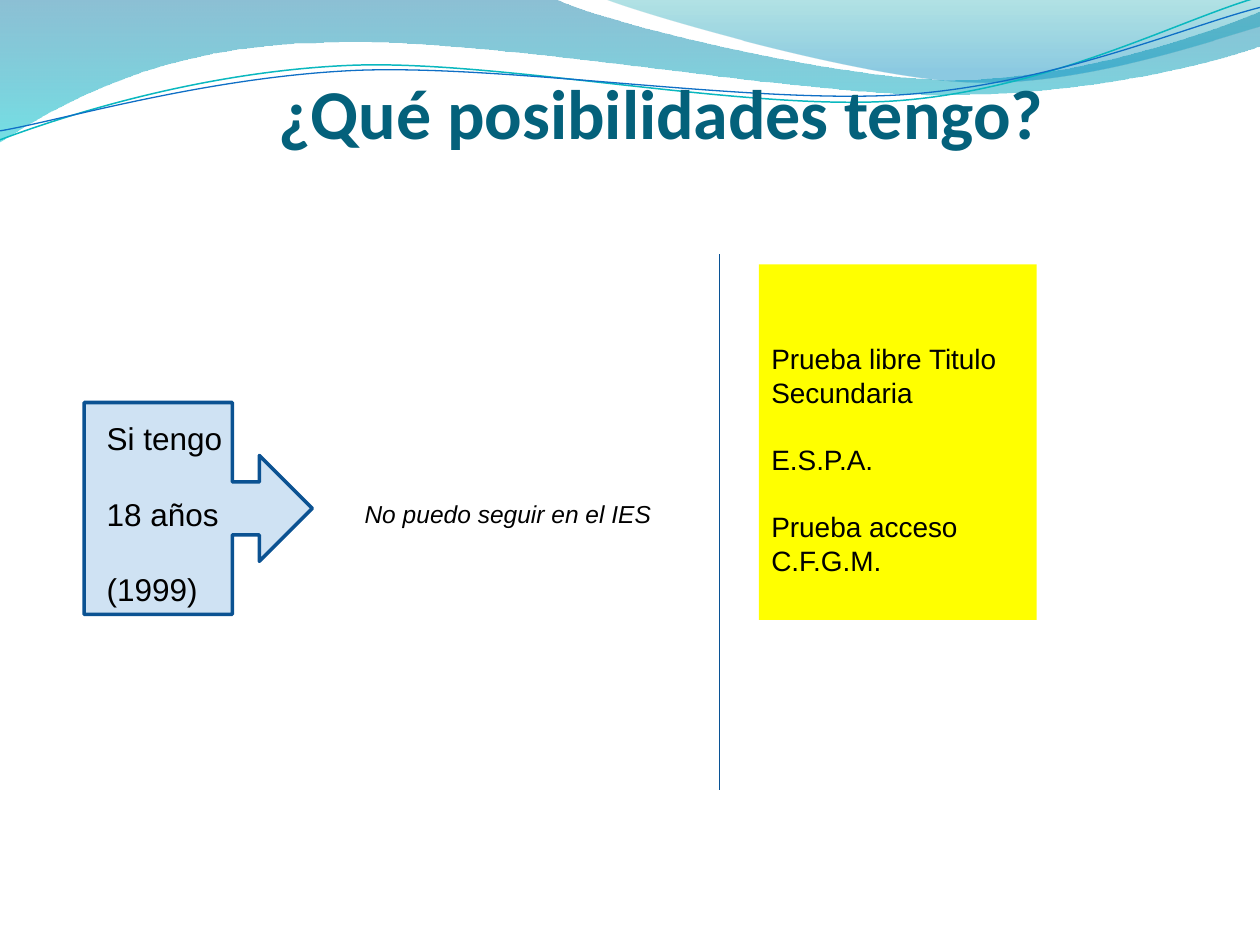
from dataclasses import dataclass, field
from math import cos, radians, sin

from lxml import etree
from pptx import Presentation
from pptx import util as u
from pptx.dml import color
from pptx.enum import shapes, text
from pptx.oxml import ns

ARIAL = {"name": "Arial", "bold": False, "italic": False}


@dataclass
class Wave:
    place: tuple
    start: tuple
    segments: list
    stops: list = field(default_factory=list)
    line: str = ""
    width: float = 0
    rotation: float = 0


@dataclass
class Label:
    place: tuple
    lines: list
    size: float
    hue: str = "000000"
    font: dict = field(default_factory=dict)
    frame: dict = field(default_factory=dict)
    align: text.PP_ALIGN = text.PP_ALIGN.LEFT
    fill: str = ""


WAVES = [
    Wave((-0.03, -0.03, 25.45, 2.9), (0, -0.03), [
        (11.18, -0.03),
        (12.09, 0.43, 16.87, 1.6, 19.25, 1.6),
        (21.67, 1.6, 24.33, 0.66, 25.4, 0.23),
        (25.43, 0.91),
        (24.97, 1.12, 22.1, 1.93, 18.95, 1.91),
        (15.8, 1.91, 9.7, 0.71, 6.53, 0.86),
        (3.25, 0.89, 1.17, 2.11, -0.03, 2.87),
        (0, -0.03),
    ], stops=[(0, "0074A1", 45), (1, "00C6CF", 55)]),
    Wave((12.17, -0.03, 13.23, 1.78), (12.17, -0.03), [
        (12.93, 0.28, 17.32, 1.57, 19.53, 1.65),
        (21.74, 1.75, 24.41, 0.81, 25.4, 0.53),
        (25.4, 0),
        (12.17, -0.03),
    ], stops=[(0, "00A1A9", 30), (0.8, "008BBF", 45)]),
    Wave((-0.05, 0.56, 25.45, 1.8), (0, 2.82), [
        (1.22, 2.36, 4.01, 1.45, 7.04, 1.32),
        (10.03, 1.19, 15.06, 2.26, 18.11, 2.03),
        (21.16, 1.8, 23.83, 0.38, 25.35, -0.05),
    ], line="0AB8BF", width=0.85, rotation=357.3),
    Wave((-0.05, 0.76, 25.48, 1.47), (0, 2.64), [
        (1.19, 2.44, 4.17, 1.55, 7.19, 1.42),
        (10.24, 1.3, 15.16, 2.11, 18.21, 1.91),
        (21.23, 1.7, 23.9, 0.53, 25.4, 0.15),
    ], line="0F6FC6", width=0.75, rotation=357.3),
]

LABELS = [
    Label((2.9, 0.53, 20.85, 2.57), [("¿Qué posibilidades tengo?", 0)], 40, "04617B",
          {"name": "Calibri", "bold": True},
          {"vertical_anchor": text.MSO_ANCHOR.BOTTOM, "margin_left": 0,
           "margin_right": 0, "margin_bottom": 0}, text.PP_ALIGN.CENTER),
    Label((1.9, 8.33, 3.23, 4.09), [("Si tengo", 0), ("18 años", 21.5), ("(1999)", 21.5)],
          18, font=ARIAL, frame={"word_wrap": False}),
    Label((15.3, 5.33, 5.6, 7.17),
          [("Prueba libre Titulo Secundaria", 0), ("E.S.P.A.", 19.2),
           ("Prueba acceso", 19.2), ("C.F.G.M.", 0)],
          16, font=ARIAL, frame={"margin_top": u.Cm(1.56)}, fill="FFFF00"),
    Label((7.1, 9.93, 6.32, 0.86), [("No puedo seguir en el IES", 0)], 14,
          font={**ARIAL, "italic": True}, frame={"word_wrap": False}),
]


def rgb(value: str) -> color.RGBColor:
    return color.RGBColor.from_string(value)


def apply(target, values: dict) -> None:
    for name, value in values.items():
        setattr(target, name, value)


def set_alpha(node, percent: int) -> None:
    for hue in node.iter(ns.qn("a:srgbClr")):
        etree.SubElement(hue, ns.qn("a:alpha")).set("val", str(percent * 1000))


def set_line(line, hue: str, width: float) -> None:
    line.color.rgb = rgb(hue)
    line.width = u.Pt(width)


def local_point(wave: Wave, x: float, y: float) -> tuple:
    left, top, width, height = wave.place
    angle = radians(-wave.rotation)
    x, y = x - left - width / 2, y - top - height / 2
    return (u.Cm(width / 2 + x * cos(angle) - y * sin(angle)),
            u.Cm(height / 2 + x * sin(angle) + y * cos(angle)))


def add_step(outline, tag: str, wave: Wave, values: tuple) -> None:
    step = etree.SubElement(outline, ns.qn(tag))
    for x, y in zip(values[::2], values[1::2]):
        point = etree.SubElement(step, ns.qn("a:pt"))
        for name, value in zip("xy", local_point(wave, x, y)):
            point.set(name, str(value))


def trace(outline, wave: Wave) -> None:
    for step in list(outline):
        outline.remove(step)
    for name, value in zip("wh", wave.place[2:]):
        outline.set(name, str(u.Cm(value)))
    add_step(outline, "a:moveTo", wave, wave.start)
    for segment in wave.segments:
        add_step(outline, "a:lnTo" if len(segment) == 2 else "a:cubicBezTo", wave, segment)
    if wave.stops:
        etree.SubElement(outline, ns.qn("a:close"))


def draw_wave(page, wave: Wave) -> None:
    builder = page.shapes.build_freeform(*(u.Cm(value) for value in wave.start))
    builder.add_line_segments([tuple(u.Cm(value) for value in segment[-2:])
                               for segment in wave.segments], close=False)
    shape = builder.convert_to_shape()
    apply(shape, dict(zip(("left", "top", "width", "height"), map(u.Cm, wave.place))))
    trace(next(shape._element.iter(ns.qn("a:path"))), wave)
    shape.shadow.inherit = False
    shape.rotation = wave.rotation
    if wave.line:
        shape.fill.background()
        set_line(shape.line, wave.line, wave.width)
        return
    shape.line.fill.background()
    shape.fill.gradient()
    shape.fill.gradient_angle = 270
    for stop, (position, hue, opacity) in zip(shape.fill.gradient_stops, wave.stops):
        stop.position = position
        stop.color.rgb = rgb(hue)
        set_alpha(stop.color._xFill, opacity)


def draw_label(page, label: Label) -> None:
    place = [u.Cm(value) for value in label.place]
    if label.fill:
        box = page.shapes.add_shape(shapes.MSO_SHAPE.RECTANGLE, *place)
        box.shadow.inherit = False
        box.fill.solid()
        box.fill.fore_color.rgb = rgb(label.fill)
        box.line.fill.background()
    else:
        box = page.shapes.add_textbox(*place)
    frame = box.text_frame
    apply(frame, {"word_wrap": True, "vertical_anchor": text.MSO_ANCHOR.TOP, **label.frame})
    for index, (words, gap) in enumerate(label.lines):
        para = frame.add_paragraph() if index else frame.paragraphs[0]
        apply(para, {"alignment": label.align, "space_before": u.Pt(gap)})
        span = para.add_run()
        span.text = words
        apply(span.font, {"size": u.Pt(label.size), **label.font})
        span.font.color.rgb = rgb(label.hue)


def draw_callout(page) -> None:
    callout = page.shapes.add_shape(shapes.MSO_SHAPE.UP_ARROW_CALLOUT,
                                    u.Cm(1.86), u.Cm(7.95), u.Cm(4.27), u.Cm(4.6))
    callout.rotation = 90
    callout.shadow.inherit = False
    callout.fill.solid()
    callout.fill.fore_color.rgb = rgb("0F6FC6")
    set_alpha(callout.fill._xPr.find(ns.qn("a:solidFill")), 20)
    set_line(callout.line, "0B5292", 2)


def draw_divider(page) -> None:
    divider = page.shapes.add_connector(shapes.MSO_CONNECTOR.STRAIGHT,
                                        u.Cm(14.5), u.Cm(5.13), u.Cm(14.5), u.Cm(15.93))
    set_line(divider.line, "095295", 0.75)
    etree.SubElement(divider._element.spPr, ns.qn("a:effectLst"))


def main() -> None:
    deck = Presentation()
    apply(deck, {"slide_width": u.Cm(25.4), "slide_height": u.Cm(19.05)})
    page = deck.slides.add_slide(deck.slide_layouts[6])
    for wave in WAVES:
        draw_wave(page, wave)
    title, *notes = LABELS
    draw_label(page, title)
    draw_callout(page)
    for label in notes:
        draw_label(page, label)
    draw_divider(page)
    deck.save("out.pptx")


if __name__ == "__main__":
    main()
